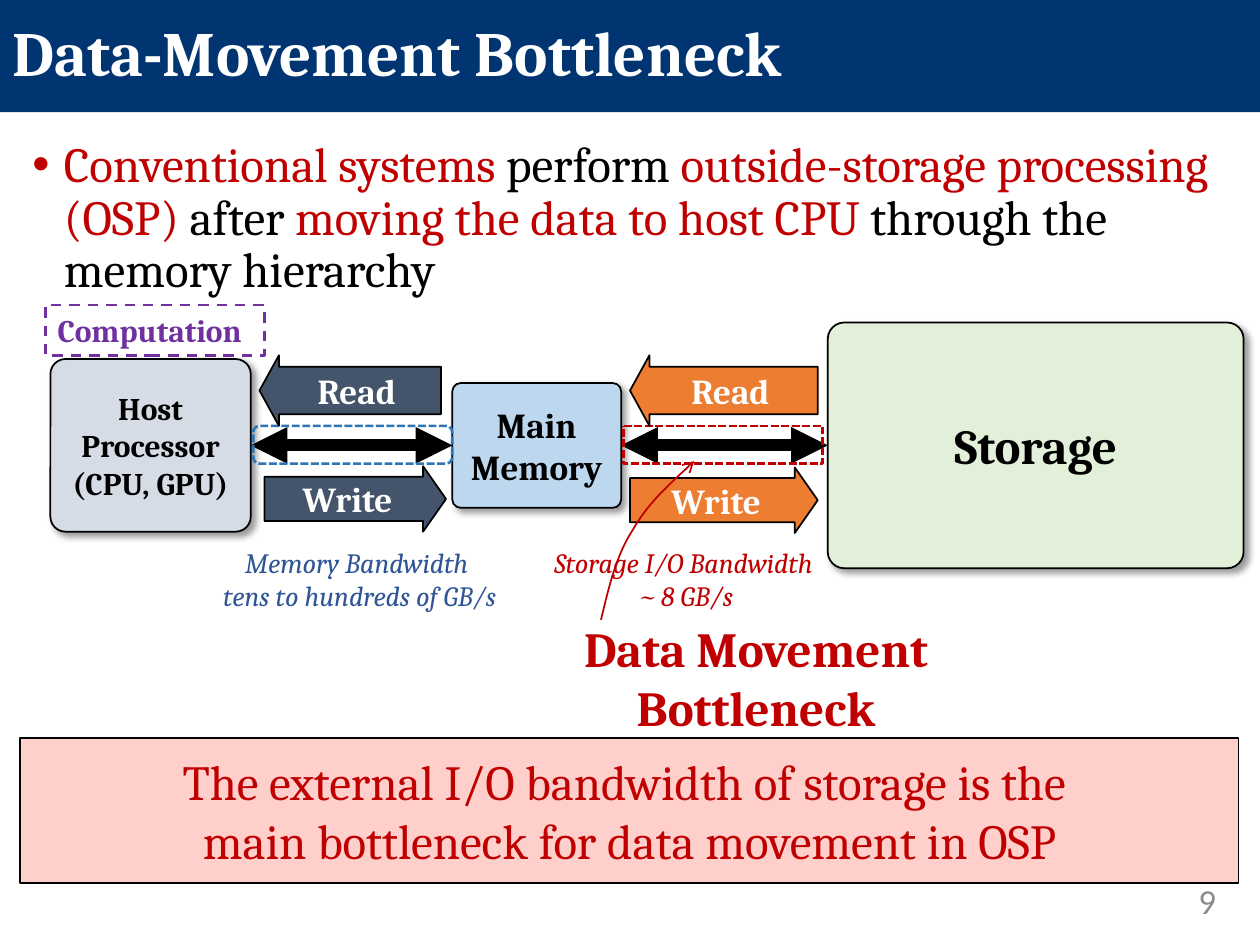
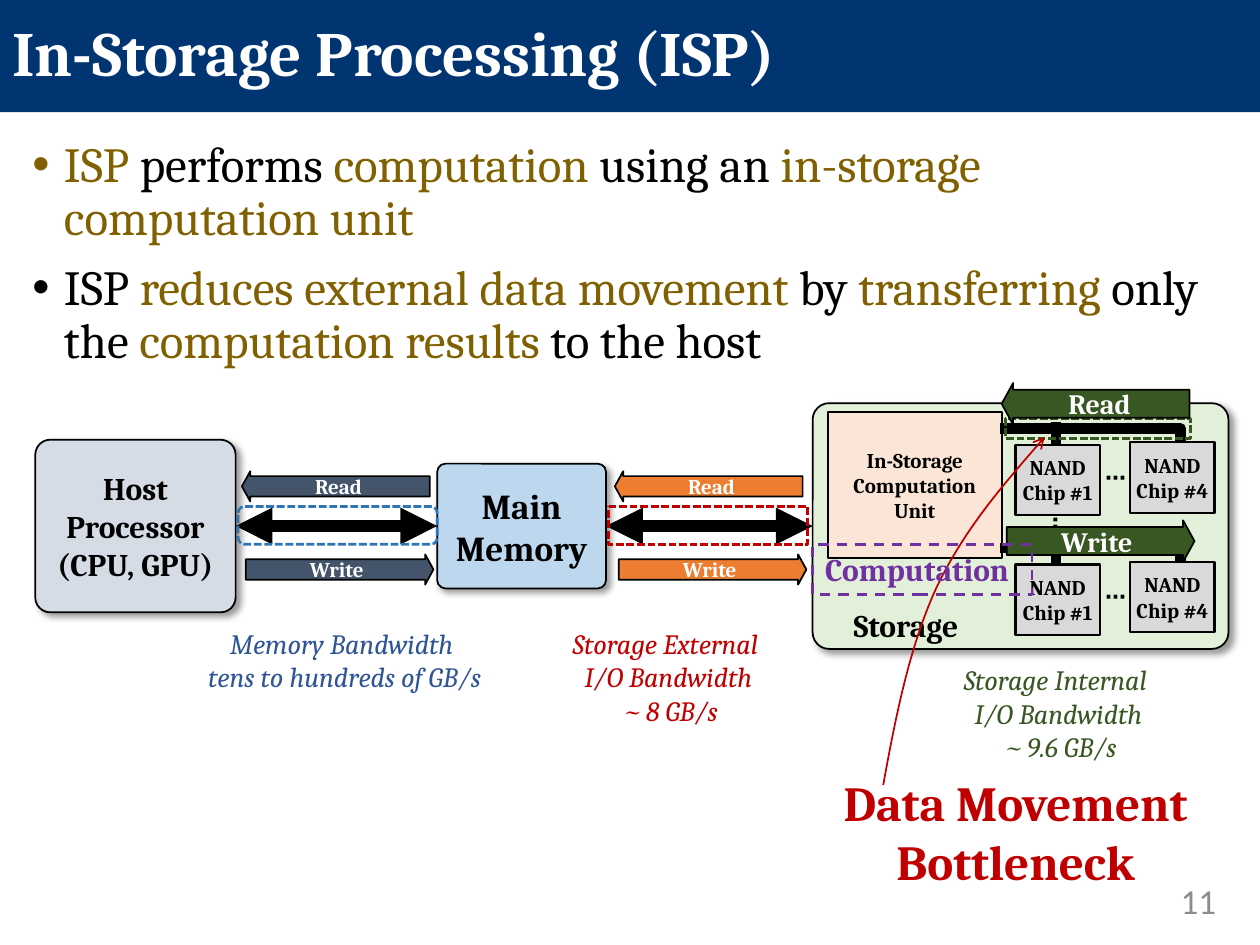
from lxml import etree
from pptx import Presentation
from pptx.dml.color import RGBColor
from pptx.enum import dml, shapes, text
from pptx.oxml import ns
from pptx.util import Inches, Pt

NAVY = RGBColor(0x00, 0x35, 0x72)
WHITE = RGBColor(0xFF, 0xFF, 0xFF)
BLACK = RGBColor(0, 0, 0)
PAGE_GREY = RGBColor(0x8C, 0x8C, 0x8C)
RED = RGBColor(0xC0, 0, 0)
PINK = RGBColor(0xFF, 0xCF, 0xCB)
GOLD = RGBColor(0x80, 0x60, 0x00)
PURPLE = RGBColor(0x70, 0x30, 0xA0)
HOST_GREY = RGBColor(0xD6, 0xDC, 0xE5)
MEMORY_BLUE = RGBColor(0xBD, 0xD7, 0xEE)
STORAGE_GREEN = RGBColor(0xE2, 0xF0, 0xD9)
UNIT_PEACH = RGBColor(0xFB, 0xE5, 0xD6)
CHIP_GREY = RGBColor(0xD9, 0xD9, 0xD9)
SLATE = RGBColor(0x44, 0x54, 0x6A)
ORANGE = RGBColor(0xED, 0x7D, 0x31)
GREEN = RGBColor(0x38, 0x57, 0x23)
LINK_BLUE = RGBColor(0x2E, 0x75, 0xB6)
CAPTION_BLUE = RGBColor(0x2F, 0x55, 0x97)

FONT = "Cambria"
RECT = shapes.MSO_SHAPE.RECTANGLE
ROUNDED = shapes.MSO_SHAPE.ROUNDED_RECTANGLE
STRAIGHT = shapes.MSO_CONNECTOR.STRAIGHT
TOP, MIDDLE = text.MSO_ANCHOR.TOP, text.MSO_ANCHOR.MIDDLE
LEFT, CENTER, RIGHT = text.PP_ALIGN.LEFT, text.PP_ALIGN.CENTER, text.PP_ALIGN.RIGHT


def inches(*lengths):
    """Turn numbers into lengths in inches."""
    return [Inches(length) for length in lengths]


def sub(parent, tag, **attributes):
    """Append a DrawingML element."""
    return etree.SubElement(parent, ns.qn(tag), attributes)


def style_font(font, size, color=None, bold=False, italic=False, name=FONT):
    """Set the look of a font."""
    font.name, font.size, font.bold, font.italic = name, Pt(size), bold, italic
    if color is not None:
        font.color.rgb = color


def write(shape, lines, size, color, bold=False, italic=False, align=CENTER,
          anchor=MIDDLE, insets=(0.1, 0.05), name=FONT, spacing=None):
    """Fill a shape with evenly styled paragraphs."""
    frame = shape.text_frame
    frame.word_wrap, frame.vertical_anchor = True, anchor
    frame.margin_left = frame.margin_right = Inches(insets[0])
    frame.margin_top = frame.margin_bottom = Inches(insets[1])
    for index, line in enumerate(lines):
        paragraph = frame.add_paragraph() if index else frame.paragraphs[0]
        paragraph.text, paragraph.alignment = line, align
        if spacing:
            paragraph.line_spacing = spacing
        style_font(paragraph.font, size, color, bold, italic, name)


def add_label(slide, box, lines, size, color, **style):
    """Add a text box with styled paragraphs."""
    label = slide.shapes.add_textbox(*inches(*box))
    write(label, lines, size, color, **style)
    return label


def add_box(slide, kind, box, fill=None, line=BLACK, width=1, dash=None, adjust=()):
    """Add a preset shape with fill, outline and adjustments."""
    shape = slide.shapes.add_shape(kind, *inches(*box))
    shape.shadow.inherit = False
    if fill is None:
        shape.fill.background()
    else:
        shape.fill.solid()
        shape.fill.fore_color.rgb = fill
    if line is None:
        shape.line.fill.background()
    else:
        shape.line.color.rgb, shape.line.width = line, Pt(width)
    if dash:
        shape.line.dash_style = dash
    for index, value in enumerate(adjust):
        shape.adjustments[index] = value
    return shape


def add_component(slide, box, fill, adjust):
    """Add a rounded hardware block with a soft shadow."""
    component = add_box(slide, ROUNDED, box, fill, adjust=[adjust])
    effects = component._element.spPr.find(ns.qn("a:effectLst"))
    shadow = sub(effects, "a:outerShdw", blurRad=str(Pt(4)), dist=str(Pt(3)),
                 dir="2700000", algn="tl", rotWithShape="0")
    sub(sub(shadow, "a:srgbClr", val="000000"), "a:alpha", val="40000")
    return component


def add_line(slide, start, end, width):
    """Add a straight black connector without a shadow."""
    line = slide.shapes.add_connector(STRAIGHT, *inches(*start, *end))
    line.line.color.rgb, line.line.width = BLACK, Pt(width)
    sub(line._element.spPr, "a:effectLst")
    return line


def add_link(slide, source, target):
    """Join two components with a thick two-headed arrow."""
    link = add_line(slide, (0, 0), (1, 1), 7)
    link.begin_connect(source, 3)
    link.end_connect(target, 1)
    for end in ("a:headEnd", "a:tailEnd"):
        sub(link.line._get_or_add_ln(), end, type="triangle")


def add_path(slide, points, color, width):
    """Add an open, unfilled outline through the points."""
    start, *rest = [inches(*point) for point in points]
    builder = slide.shapes.build_freeform(*start)
    builder.add_line_segments(rest, close=False)
    outline = builder.convert_to_shape()
    outline.shadow.inherit = False
    outline.fill.background()
    outline.line.color.rgb, outline.line.width = color, Pt(width)
    return outline


def add_curved_arrow(slide, points):
    """Add a red Bezier arrow; each three points after the start form a curve."""
    arrow = add_path(slide, points, RED, 1)
    path = next(arrow._element.iter(ns.qn("a:path")))
    segments = path.findall(ns.qn("a:lnTo"))
    for first in range(0, len(segments), 3):
        curve = sub(path, "a:cubicBezTo")
        for segment in segments[first:first + 3]:
            curve.append(segment[0])
            path.remove(segment)
    sub(arrow.line._get_or_add_ln(), "a:tailEnd", type="arrow")


def add_traffic(slide, read_box, write_box, color, size, write_head=0.275):
    """Add the Read and Write block arrows of one link."""
    for label, kind, box, head in (
            ("Read", shapes.MSO_SHAPE.LEFT_ARROW, read_box, 0.275),
            ("Write", shapes.MSO_SHAPE.RIGHT_ARROW, write_box, write_head)):
        arrow = add_box(slide, kind, box, color, adjust=(0.675, head))
        write(arrow, [label], size, WHITE, bold=True)


def add_frame(slide, title, number):
    """Add the title band, the title and the page number."""
    band = (0, 0, 10, 0.89)
    add_box(slide, RECT, band, NAVY, line=None)
    add_label(slide, (8.67, 6.95, 1.08, 0.4), [number], 20, PAGE_GREY,
              align=RIGHT, anchor=MIDDLE, name="Calibri")
    add_label(slide, band, [title], 36, WHITE, bold=True, align=LEFT, spacing=0.9)


def add_bullets(slide, bullets, accent):
    """Add bullets whose runs alternate between accent and black."""
    frame = slide.shapes.add_textbox(*inches(0.16, 1.06, 9.67, 5.89)).text_frame
    frame.word_wrap = True
    for index, (accent_first, parts) in enumerate(bullets):
        paragraph = frame.add_paragraph() if index else frame.paragraphs[0]
        paragraph.line_spacing = 0.9
        if index:
            paragraph.space_before = Pt(10)
        properties = paragraph._p.get_or_add_pPr()
        properties.set("marL", str(Inches(0.25)))
        properties.set("indent", str(Inches(-0.25)))
        sub(properties, "a:buFont", typeface="Arial")
        sub(properties, "a:buChar", char="•")
        style_font(paragraph.font, 28)
        for position, part in enumerate(parts):
            run = paragraph.add_run()
            run.text = part
            run.font.color.rgb = accent if (position % 2 == 0) == accent_first else BLACK


def add_hierarchy(slide, left, top, storage_caption):
    """Add host, memory and storage with their links; return the storage."""
    host = add_component(slide, (left, top, 1.59, 1.37), HOST_GREY, 0.087)
    write(host, ["Host Processor", "(CPU, GPU)"], 18, BLACK, bold=True)
    memory = add_component(slide, (left + 3.19, top + 0.19, 1.34, 0.99), MEMORY_BLUE, 0.067)
    write(memory, ["Main", "Memory"], 20, BLACK, bold=True)
    storage = add_component(slide, (left + 6.17, top - 0.29, 3.3, 1.95), STORAGE_GREEN, 0.067)
    add_link(slide, host, memory)
    add_link(slide, memory, storage)
    for x, color, corner in ((1.61, LINK_BLUE, 0.167), (4.55, RED, 0)):
        add_box(slide, ROUNDED, (left + x, top + 0.53, 1.58, 0.3), line=color,
                width=1.5, dash=dml.MSO_LINE.SQUARE_DOT, adjust=[corner])
    add_caption(slide, (left + 1.21, top + 1.43, 2.49, 0.64),
                "Memory Bandwidth \ntens to hundreds of GB/s", CAPTION_BLUE)
    add_caption(slide, (left + 3.78, top + 1.43, 2.49, 0.64), storage_caption, RED)
    return storage


def add_caption(slide, box, caption, color):
    """Add an italic bandwidth caption."""
    add_label(slide, box, [caption], 16, color, italic=True, anchor=TOP)


def add_computation(slide, left, top):
    """Add the dashed tag marking where computation happens."""
    tag = add_box(slide, RECT, (left, top, 1.74, 0.4), line=PURPLE, width=1.5,
                  dash=dml.MSO_LINE.DASH)
    write(tag, ["Computation"], 18, PURPLE, bold=True, align=LEFT, anchor=TOP)


def add_bottleneck(slide, left, top, curve):
    """Add the bottleneck callout and its curved arrow."""
    add_curved_arrow(slide, curve)
    add_label(slide, (left, top, 3.58, 1.04), ["Data Movement Bottleneck"], 28, RED,
              bold=True, anchor=TOP)


def add_dots(slide, box):
    """Add an ellipsis between chips."""
    return add_label(slide, box, ["⋯"], 12, BLACK, bold=True, insets=(0, 0), name="Arial")


def add_chip_row(slide, left, top):
    """Add one bus with its two NAND chips."""
    add_path(slide, [(left + 1.43, top + 0.11), (left + 1.43, top), (left, top)], BLACK, 6)
    add_line(slide, (left + 0.44, top - 0.05), (left + 0.44, top + 0.19), 6)
    add_dots(slide, (left + 0.83, top + 0.28, 0.17, 0.21))
    for x, y, chip_name in ((0.12, 0.13, "Chip #1"), (1.03, 0.11, "Chip #4")):
        chip = add_box(slide, RECT, (left + x, top + y, 0.67, 0.56), CHIP_GREY, width=1.25)
        write(chip, ["NAND", chip_name], 12, BLACK, bold=True, insets=(0, 0.05))


def add_storage_inside(slide, left, top):
    """Add the computation unit, chips and internal link within the storage."""
    unit = add_box(slide, RECT, (left + 0.12, top + 0.07, 1.38, 1.16), UNIT_PEACH, width=1.25)
    write(unit, ["In-Storage Computation Unit"], 12, BLACK, bold=True, insets=(0.1, 0.04))
    for row in range(2):
        add_chip_row(slide, left + 1.49, top + 0.2 + 0.95 * row)
    add_dots(slide, (left + 1.81, top + 0.91, 0.25, 0.14)).rotation = 90
    add_label(slide, (left + 0.07, top + 1.56, 1.34, 0.4), ["Storage"], 18, BLACK,
              bold=True, anchor=TOP)
    add_box(slide, RECT, (left + 1.53, top + 0.12, 1.47, 0.16), line=GREEN,
            width=1.5, dash=dml.MSO_LINE.SQUARE_DOT)
    add_traffic(slide, (left + 1.5, top - 0.16, 1.49, 0.33),
                (left + 1.54, top + 0.93, 1.49, 0.33), GREEN, 16)


def build_bottleneck_slide(slide):
    """Build the slide on outside-storage processing."""
    add_frame(slide, "Data-Movement Bottleneck", "9")
    add_bullets(slide, [(True, [
        "Conventional systems", " perform ", "outside-storage processing (OSP) ", "after ",
        "moving the data to host CPU", " through the memory hierarchy"])], RED)
    storage = add_hierarchy(slide, 0.4, 2.85, "Storage I/O Bandwidth\n ~ 8 GB/s")
    write(storage, ["Storage"], 28, BLACK, bold=True)
    add_traffic(slide, (2.06, 2.82, 1.44, 0.56), (2.1, 3.7, 1.44, 0.52), SLATE, 20, 0.35)
    add_traffic(slide, (5, 2.82, 1.49, 0.56), (5, 3.71, 1.49, 0.52), ORANGE, 20, 0.35)
    add_bottleneck(slide, 4.21, 4.86, [
        (4.77, 4.92), (4.83, 4.67), (4.89, 4.41), (5.02, 4.21),
        (5.14, 4), (5.33, 3.83), (5.51, 3.66)])
    takeaway = add_box(slide, RECT, (0.16, 5.86, 9.67, 1.15), PINK)
    write(takeaway, ["The external I/O bandwidth of storage is the \n"
                     "main bottleneck for data movement in OSP"], 28, RED, insets=(0, 0))
    add_computation(slide, 0.36, 2.42)


def build_isp_slide(slide):
    """Build the slide on in-storage processing."""
    add_frame(slide, "In-Storage Processing (ISP)", "11")
    add_bullets(slide, [
        (True, ["ISP", " performs ", "computation", " using an ",
                "in-storage computation unit"]),
        (False, ["ISP ", "reduces external data movement ", "by ", "transferring",
                 " only the ", "computation results ", "to the host"])], GOLD)
    add_hierarchy(slide, 0.28, 3.49, "Storage External \nI/O Bandwidth\n ~ 8 GB/s")
    add_storage_inside(slide, 6.45, 3.2)
    for left, color in ((1.92, SLATE), (4.88, ORANGE)):
        add_traffic(slide, (left, 3.74, 1.49, 0.24), (left + 0.03, 4.4, 1.49, 0.24), color, 12)
    add_caption(slide, (7.51, 5.21, 1.78, 0.91),
                "Storage Internal \nI/O Bandwidth\n ~ 9.6 GB/s", GREEN)
    add_bottleneck(slide, 6.27, 6.08, [
        (7.01, 6.23), (7.11, 5.68), (7.22, 5.13), (7.43, 4.67),
        (7.65, 4.21), (7.97, 3.84), (8.29, 3.47)])
    add_computation(slide, 6.45, 4.32)


def main():
    """Build and save the presentation."""
    deck = Presentation()
    deck.slide_width, deck.slide_height = inches(10, 7.5)
    for build in (build_bottleneck_slide, build_isp_slide):
        build(deck.slides.add_slide(deck.slide_layouts[6]))
    deck.save("out.pptx")


if __name__ == "__main__":
    main()
